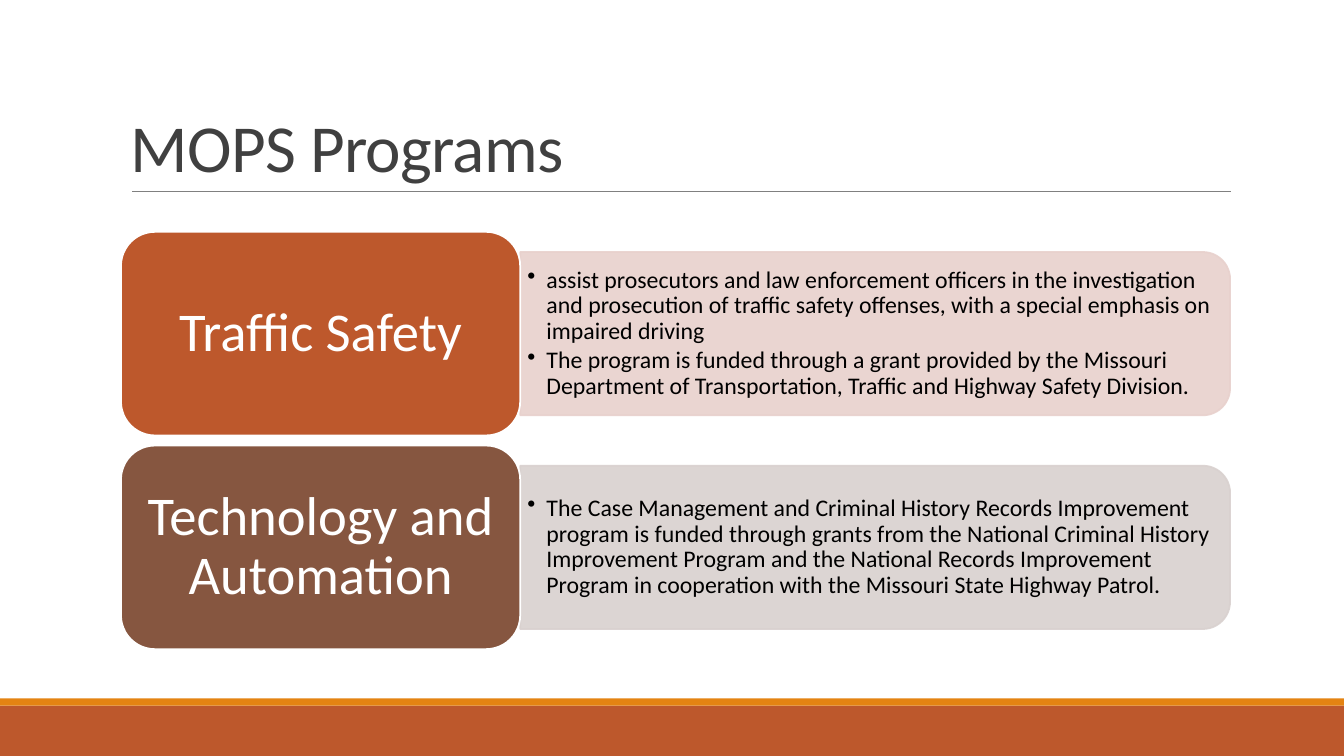
from lxml.etree import SubElement
from pptx import Presentation
from pptx.dml.color import RGBColor
from pptx.enum.shapes import MSO_CONNECTOR, MSO_SHAPE
from pptx.enum.text import MSO_ANCHOR, PP_ALIGN
from pptx.oxml.ns import qn
from pptx.util import Inches, Pt

WHITE = RGBColor(0xFF, 0xFF, 0xFF)
BLACK = RGBColor(0x00, 0x00, 0x00)
DARK_GRAY = RGBColor(0x40, 0x40, 0x40)
GRAY = RGBColor(0x80, 0x80, 0x80)
RUST = RGBColor(0xBD, 0x58, 0x2C)
ORANGE = RGBColor(0xE4, 0x83, 0x12)
BROWN = RGBColor(0x86, 0x56, 0x40)
PALE_ROSE = RGBColor(0xE8, 0xD1, 0xCD)
PALE_TAUPE = RGBColor(0xD9, 0xD1, 0xCF)

PROGRAMS = [
    ("Traffic Safety", RUST, PALE_ROSE, [
        "assist prosecutors and law enforcement officers in the investigation and "
        "prosecution of traffic safety offenses, with a special emphasis on impaired driving",
        "The program is funded through a grant provided by the Missouri Department of "
        "Transportation, Traffic and Highway Safety Division.",
    ]),
    ("Technology and Automation", BROWN, PALE_TAUPE, [
        "The Case Management and Criminal History Records Improvement program is funded "
        "through grants from the National Criminal History Improvement Program and the "
        "National Records Improvement Program in cooperation with the Missouri State "
        "Highway Patrol.",
    ]),
]
LEFT, TOP, PITCH = 1.2, 2.3, 2.12
LABEL_WIDTH, LABEL_HEIGHT = 3.96, 2.02
PANEL_WIDTH, PANEL_HEIGHT = 7.04, 1.62


class ProgramSlide:
    font_name = "Calibri"

    def __init__(self, page):
        self.page = page

    def shape(self, kind, left, top, width, height, fill, line=None, alpha=None):
        shape = self.page.shapes.add_shape(
            kind, Inches(left), Inches(top), Inches(width), Inches(height))
        shape.shadow.inherit = False
        shape.fill.solid()
        shape.fill.fore_color.rgb = fill
        if line is None:
            shape.line.fill.background()
        else:
            shape.line.color.rgb = line
            shape.line.width = Pt(1.25)
        if alpha is not None:
            for color in shape._element.spPr.iter(qn("a:srgbClr")):
                SubElement(color, qn("a:alpha")).set("val", str(alpha * 1000))
        return shape

    def rule(self, left, right, top):
        line = self.page.shapes.add_connector(
            MSO_CONNECTOR.STRAIGHT, Inches(left), Inches(top), Inches(right), Inches(top))
        line.line.color.rgb = GRAY
        line.line.width = Pt(0.5)
        SubElement(line._element.spPr, qn("a:effectLst"))

    def text_box(self, left, top, width, height):
        return self.page.shapes.add_textbox(
            Inches(left), Inches(top), Inches(width), Inches(height))

    def set_text(self, box, texts, size, color, anchor=MSO_ANCHOR.MIDDLE,
                 align=PP_ALIGN.LEFT, margins=(0.1, 0.05), spacing=0.9, after=0):
        frame = box.text_frame
        frame.word_wrap = True
        frame.vertical_anchor = anchor
        frame.margin_left = frame.margin_right = Inches(margins[0])
        frame.margin_top = frame.margin_bottom = Inches(margins[1])
        frame.text = "\n".join(texts)
        for para in frame.paragraphs:
            para.alignment = align
            para.line_spacing = spacing
            para.space_after = Pt(after)
            para.font.name = self.font_name
            para.font.size = Pt(size)
            para.font.color.rgb = color
        return frame.paragraphs

    def title(self, text):
        box = self.text_box(LEFT, 0.31, 11, 1.59)
        paras = self.set_text(box, [text], 48, DARK_GRAY, MSO_ANCHOR.BOTTOM, spacing=0.85)
        for span in paras[0].runs:
            span.font._element.set("spc", "-50")

    def panel(self, top, fill, texts):
        # The panel is turned a quarter, so its rounded end faces right
        left = LEFT + LABEL_WIDTH
        middle = top + LABEL_HEIGHT / 2
        panel = self.shape(
            MSO_SHAPE.ROUND_2_SAME_RECTANGLE, left + (PANEL_WIDTH - PANEL_HEIGHT) / 2,
            middle - PANEL_WIDTH / 2, PANEL_HEIGHT, PANEL_WIDTH, fill, fill, 90)
        panel.rotation = 90
        box = self.text_box(left, middle - 0.73, 6.96, 1.46)
        for para in self.set_text(box, texts, 17, BLACK, margins=(0.07, 0.04), after=2.5):
            properties = para._p.get_or_add_pPr()
            properties.set("marL", str(Inches(0.19)))
            properties.set("indent", str(Inches(-0.19)))
            SubElement(properties, qn("a:buChar")).set("char", "•")
            # Bullets come before the default run properties
            properties.append(properties.find(qn("a:defRPr")))

    def label(self, top, fill, text):
        box = self.shape(MSO_SHAPE.ROUNDED_RECTANGLE, LEFT, top,
                         LABEL_WIDTH, LABEL_HEIGHT, fill, WHITE)
        self.set_text(box, [text], 39, WHITE, align=PP_ALIGN.CENTER, margins=(0.16, 0.08))


def main():
    deck = Presentation()
    deck.slide_width, deck.slide_height = Inches(13.33), Inches(7.5)
    slide = ProgramSlide(deck.slides.add_slide(deck.slide_layouts[6]))

    # Footer bands
    slide.shape(MSO_SHAPE.RECTANGLE, 0, 7, 13.33, 0.5, RUST)
    slide.shape(MSO_SHAPE.RECTANGLE, 0, 6.93, 13.33, 0.07, ORANGE)

    # Heading
    slide.rule(1.31, 12.21, 1.9)
    slide.title("MOPS Programs")

    # Program rows
    for row, (name, label_color, panel_color, details) in enumerate(PROGRAMS):
        top = TOP + row * PITCH
        slide.panel(top, panel_color, details)
        slide.label(top, label_color, name)

    deck.save("out.pptx")


if __name__ == "__main__":
    main()
